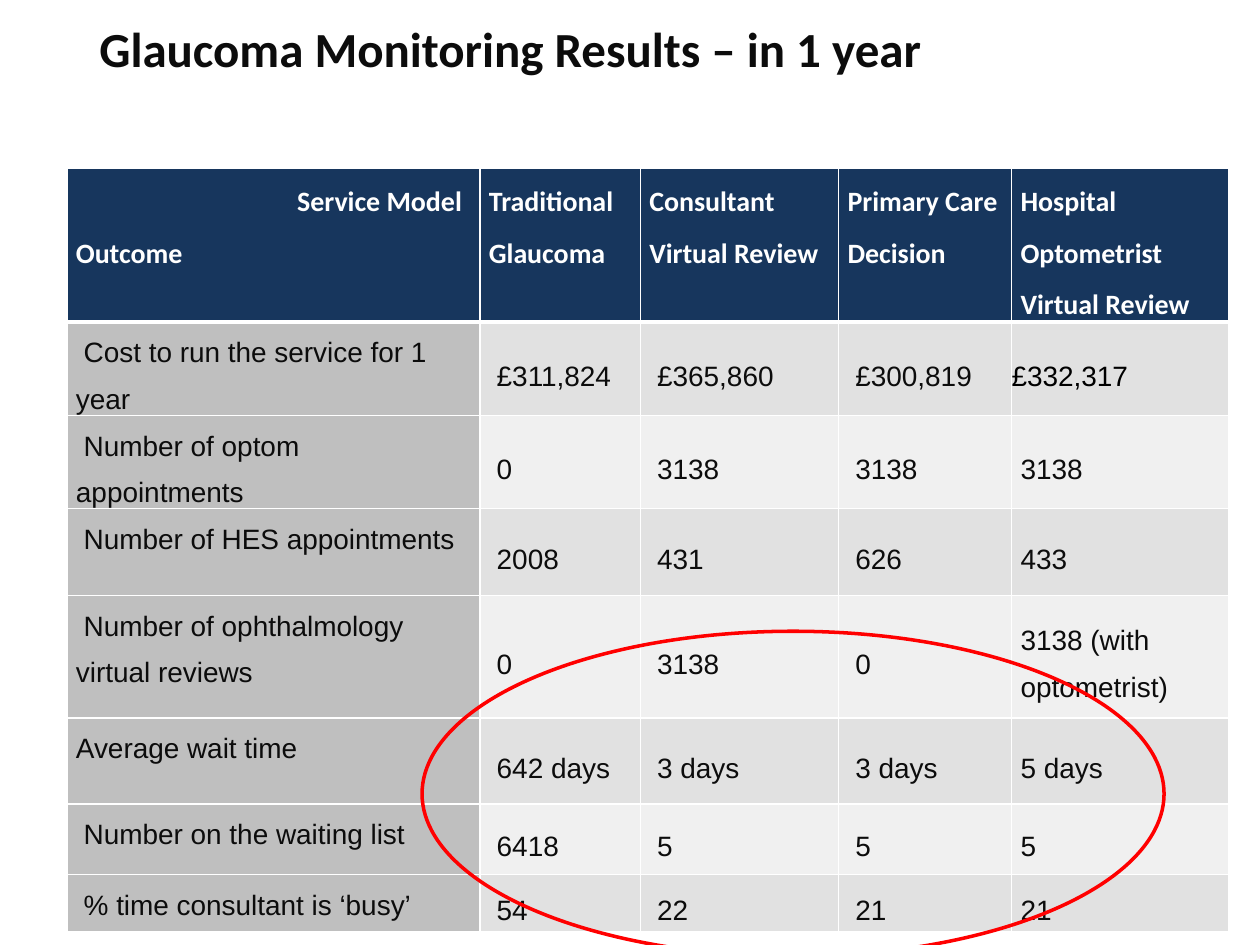
from lxml import etree
from pptx import Presentation
from pptx.dml.color import RGBColor
from pptx.enum.shapes import MSO_SHAPE
from pptx.enum.text import MSO_ANCHOR, PP_ALIGN
from pptx.oxml.ns import qn
from pptx.util import Pt

ELLIPSE = MSO_SHAPE.OVAL
TOP, MIDDLE = MSO_ANCHOR.TOP, MSO_ANCHOR.MIDDLE
RIGHT = PP_ALIGN.RIGHT

# Content
TITLE = "Glaucoma Monitoring Results – in 1 year"
HEADERS = ["Service Model\nOutcome", "Traditional Glaucoma", "Consultant Virtual Review",
           "Primary Care Decision", "Hospital Optometrist Virtual Review"]
RESULTS = [
    ["Cost to run the service for 1 year", "£311,824", "£365,860", "£300,819", "£332,317"],
    ["Number of optom appointments", "0", "3138", "3138", "3138"],
    ["Number of HES appointments", "2008", "431", "626", "433"],
    ["Number of ophthalmology virtual reviews", "0", "3138", "0", "3138 (with optometrist)"],
    ["Average wait time", "642 days", "3 days", "3 days", "5 days"],
    ["Number on the waiting list", "6418", "5", "5", "5"],
    ["% time consultant is ‘busy’", "54", "22", "21", "21"],
]
FLUSH_LABELS = {"Average wait time"}

# Format
COLORS = {"header": "17365D", "label": "BFBFBF", "odd": "E1E1E1", "even": "F0F0F0",
          "white": "FFFFFF", "text": "0C0C0C", "black": "000000", "red": "FF0000"}
TITLE_FONT = {"name": "Calibri", "size": Pt(28), "bold": True}
HEADER_FONT = {"name": "Calibri", "size": Pt(16), "bold": True}
BODY_FONT = {"name": "Arial", "size": Pt(16), "bold": False}
COLUMN_WIDTHS = [236, 91.7, 113.3, 98.9, 124.3]
ROW_HEIGHTS = [70, 49.4, 49.2, 49.5, 70, 49.2, 40.5, 32.8]
CELL_MARGIN = 5.2
INDENT = 4.45


def rgb(name):
    return RGBColor.from_string(COLORS[name])


def write(paragraph, text, font, color, spacing):
    paragraph.line_spacing = spacing
    run = paragraph.add_run()
    run.text = text
    for name, value in font.items():
        setattr(run.font, name, value)
    run.font.color.rgb = rgb(color)


def set_borders(cell, widths):
    properties = cell._tc.get_or_add_tcPr()
    for side, width in widths.items():
        line = etree.SubElement(properties, qn(f"a:ln{side}"), w=str(Pt(width)))
        fill = etree.SubElement(line, qn("a:solidFill"))
        etree.SubElement(fill, qn("a:srgbClr"), val=COLORS["white"])


presentation = Presentation()
presentation.slide_width, presentation.slide_height = Pt(720), Pt(540)
slide = presentation.slides.add_slide(presentation.slide_layouts[6])

# Results table
rows = [HEADERS] + RESULTS
table = slide.shapes.add_table(len(rows), len(HEADERS), Pt(38.2), Pt(96),
                               Pt(sum(COLUMN_WIDTHS)), Pt(sum(ROW_HEIGHTS))).table
for column, width in zip(table.columns, COLUMN_WIDTHS):
    column.width = Pt(width)
for row, height in zip(table.rows, ROW_HEIGHTS):
    row.height = Pt(height)

last_column = len(HEADERS) - 1
for row_index, values in enumerate(rows):
    is_header = row_index == 0
    for column_index, text in enumerate(values):
        cell = table.cell(row_index, column_index)
        is_label = column_index == 0
        is_flush = row_index == 1 and column_index == last_column
        margin = Pt(0 if is_flush else CELL_MARGIN)
        layout = {"margin_left": margin, "margin_right": margin,
                  "margin_top": 0, "margin_bottom": 0,
                  "vertical_anchor": TOP if is_header or is_label else MIDDLE}
        for name, value in layout.items():
            setattr(cell, name, value)

        set_borders(cell, {"L": 1, "R": 1, "T": 3 if row_index == 1 else 1,
                           "B": 3 if is_header else 1})
        band = "odd" if row_index % 2 else "even"
        cell.fill.solid()
        cell.fill.fore_color.rgb = rgb(
            "header" if is_header else "label" if is_label else band)

        font = HEADER_FONT if is_header else BODY_FONT
        color = "white" if is_header else "black" if is_flush else "text"
        frame = cell.text_frame
        for line_index, line in enumerate(text.split("\n")):
            paragraph = frame.add_paragraph() if line_index else frame.paragraphs[0]
            write(paragraph, line, font, color, 1.5)
        if not is_header and column_index < last_column and text not in FLUSH_LABELS:
            paragraph._p.get_or_add_pPr().set("indent", str(Pt(INDENT)))

# The corner heading names the columns on the right and the rows on the left
corner = table.cell(0, 0).text_frame.paragraphs[0]
corner.alignment = RIGHT
corner._p.get_or_add_pPr().set("marR", str(Pt(5)))

# Highlight ring
ring = slide.shapes.add_shape(ELLIPSE, Pt(241.2), Pt(360.7), Pt(424), Pt(185.8))
ring.shadow.inherit = False
ring.fill.background()
ring.line.color.rgb = rgb("red")
ring.line.width = Pt(2)

# Title
title = slide.shapes.add_textbox(Pt(49.7), Pt(10.8), Pt(620.6), Pt(104.4))
title.text_frame.word_wrap = True
write(title.text_frame.paragraphs[0], TITLE, TITLE_FONT, "text", 0.9)

presentation.save("out.pptx")
